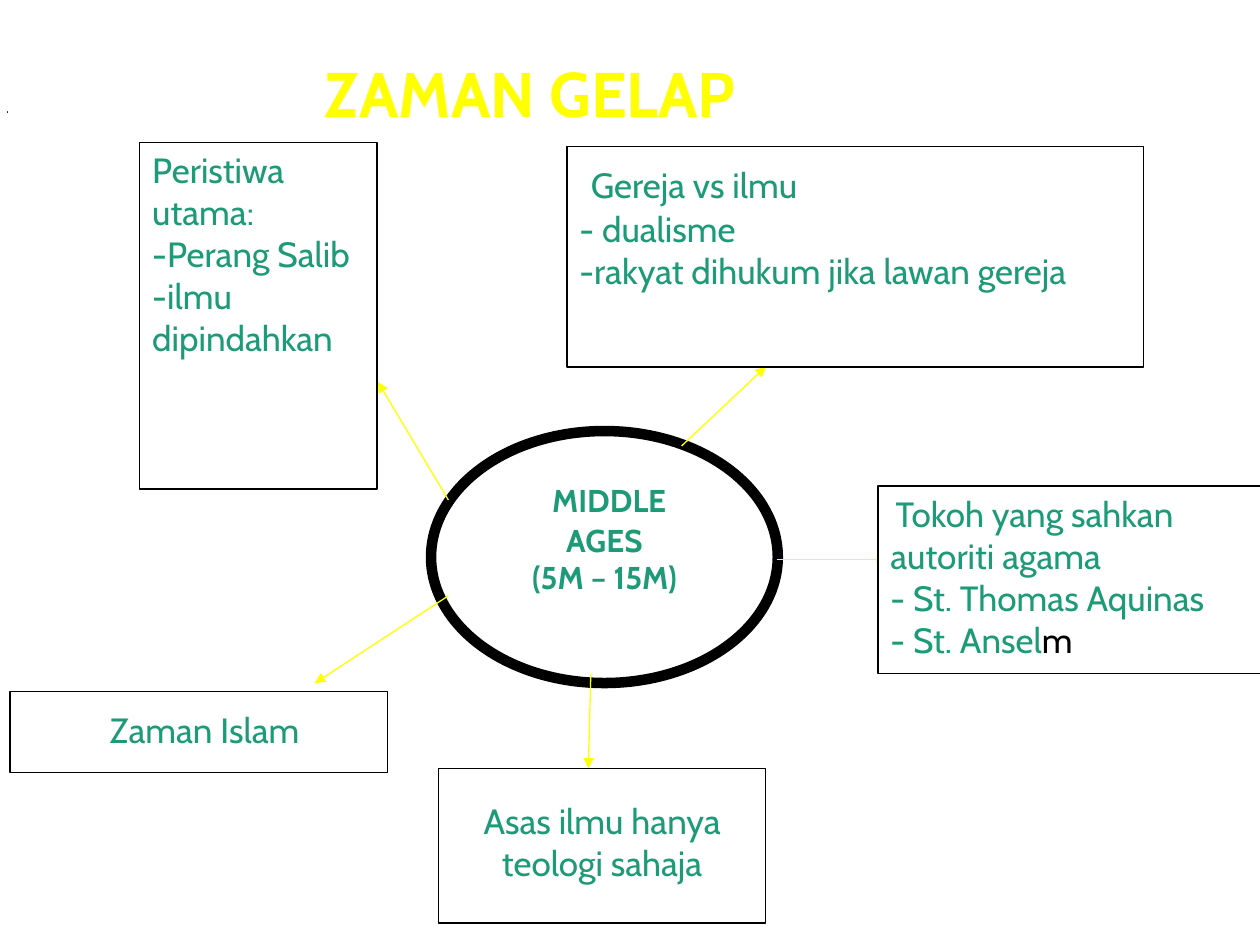
from dataclasses import dataclass

from lxml.etree import SubElement
from pptx import Presentation
from pptx.dml.color import RGBColor as RGB
from pptx.enum.shapes import MSO_CONNECTOR as LINK, MSO_SHAPE as SHAPE
from pptx.enum.text import MSO_ANCHOR as ANCHOR, MSO_AUTO_SIZE as FIT, PP_ALIGN as ALIGN
from pptx.oxml.ns import qn
from pptx.util import Cm, Pt


@dataclass(frozen=True)
class Theme:
    green: RGB = RGB(0x1D, 0x9A, 0x78)
    yellow: RGB = RGB(0xFF, 0xFF, 0x00)
    black: RGB = RGB(0, 0, 0)
    white: RGB = RGB(0xFF, 0xFF, 0xFF)
    sans: str = "Cabin"
    serif: str = "Times New Roman"
    head: int = 36
    body: int = 20
    hub: int = 18
    thin: float = 0.75
    thick: float = 6


theme = Theme()


def write(frame, paras, align, size, color=theme.green, bold=False, top=0.13):
    """Fill a frame; a run is plain text or (text, font, size, color)."""
    frame.word_wrap = True
    frame.auto_size = FIT.NONE
    frame.vertical_anchor = ANCHOR.TOP
    frame.margin_left = frame.margin_right = Cm(0.25)
    frame.margin_top, frame.margin_bottom = Cm(top), Cm(0.13)
    for i, runs in enumerate(paras):
        para = frame.paragraphs[0] if i == 0 else frame.add_paragraph()
        para.alignment = align
        for item in runs:
            if isinstance(item, str):
                item = (item, theme.sans, size, color)
            run = para.add_run()
            run.text, run.font.name = item[:2]
            run.font.size = Pt(item[2])
            run.font.color.rgb = item[3]
            run.font.bold = bold


def draw(kind, area, fill=theme.white, width=theme.thin):
    """Add an outlined shape and return it."""
    shape = slide.shapes.add_shape(kind, *map(Cm, area))
    shape.shadow.inherit = False
    shape.fill.solid()
    shape.fill.fore_color.rgb = fill
    shape.line.color.rgb = theme.black
    shape.line.width = Pt(width)
    return shape


deck = Presentation()
deck.slide_width, deck.slide_height = Cm(25.4), Cm(19.05)
slide = deck.slides.add_slide(deck.slide_layouts[5])

# Title
title = slide.shapes.title
title.left, title.top, title.width, title.height = map(Cm, (6.3, 0.97, 9.78, 1.8))
write(title.text_frame, [["ZAMAN GELAP"]], ALIGN.LEFT, theme.head, theme.yellow, True)

# Central ellipse
hub = draw(SHAPE.OVAL, (8.69, 8.69, 6.99, 5.08), width=theme.thick)
ages = [[(" ", theme.serif, 22, theme.green), "MIDDLE"], ["AGES"], ["(5M – 15M)"]]
write(hub.text_frame, ages, ALIGN.CENTER, theme.hub, bold=True)

# Arrows, drawn before the boxes so that the boxes cover their tips
arrows = [
    (13.74, 8.99, 15.44, 7.39),
    (15.67, 11.28, 17.88, 11.28),
    (11.91, 13.59, 11.86, 15.49),
    (9.04, 12.01, 6.35, 13.77),
    (9.04, 10.08, 7.62, 7.7),
]
for ends in arrows:
    arrow = slide.shapes.add_connector(LINK.STRAIGHT, *map(Cm, ends))
    arrow.line.color.rgb = theme.yellow
    arrow.line.width = Pt(theme.thin)
    SubElement(arrow.line._get_or_add_ln(), qn("a:tailEnd"), type="triangle")
    SubElement(arrow._element.spPr, qn("a:effectLst"))

# Boxes: area, alignment, top margin, paragraphs
wide = (" ", theme.serif, 26, theme.green)
small = (" ", theme.serif, 12, theme.black)
boxes = [
    ((11.43, 2.95, 11.63, 4.45), ALIGN.LEFT, 0.13,
     [[wide, "Gereja vs ilmu"], ["- dualisme"], ["-rakyat dihukum jika lawan gereja"]]),
    ((17.7, 9.8, 7.92, 3.78), ALIGN.LEFT, 0.13,
     [[small, "Tokoh yang sahkan autoriti agama"], ["- St. Thomas Aquinas"],
      ["- St. Ansel", ("m", theme.sans, theme.body, theme.black)]]),
    ((8.84, 15.49, 6.6, 3.12), ALIGN.CENTER, 0.63,
     [["Asas ilmu hanya teologi sahaja"]]),
    ((0.2, 13.94, 7.62, 1.63), ALIGN.CENTER, 0.13,
     [[wide, "Zaman Islam"]]),
    ((2.82, 2.87, 4.78, 6.99), ALIGN.JUSTIFY, 0.13,
     [["Peristiwa utama:"], ["-Perang Salib"], ["-ilmu dipindahkan"]]),
]
for area, align, top, paras in boxes:
    box = draw(SHAPE.RECTANGLE, area)
    write(box.text_frame, paras, align, theme.body, top=top)

# Small dot at the left edge
draw(SHAPE.RECTANGLE, (0.15, 2.26, 0.01, 0.01), theme.green)

deck.save("out.pptx")
